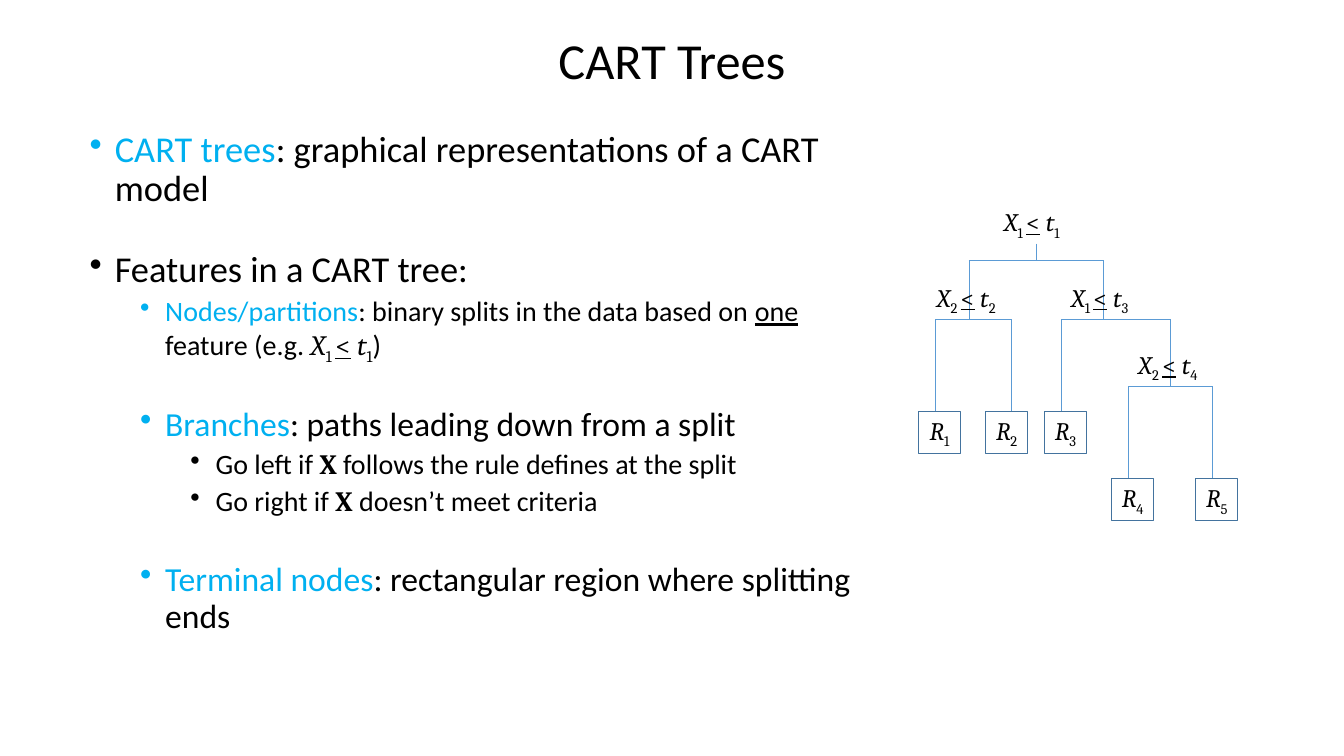
import pptx
import pptx.util
import pptx.dml.color
import pptx.enum.shapes
import pptx.enum.text
import pptx.oxml.ns
from dataclasses import dataclass
from lxml import etree


@dataclass(frozen=True)
class Theme:
    font: str = "Calibri"
    math: str = "Cambria"
    ink: str = "000000"
    accent: str = "00B0F0"
    branch: str = "5B9BD5"
    leaf: str = "43739E"
    title: int = 36
    feature: int = 26
    term: int = 24
    detail: int = 20
    node: int = 18


T = Theme()
W, H = 13.33, 7.5


def rule(feature, threshold):
    """Runs for the split rule X_feature <= t_threshold."""
    return [("X", "mi"), (f"{feature} ", "ms"), ("<", "mu"), (" ", "m"),
            ("t", "mi"), (str(threshold), "ms")]


# Run styles: a accent, b bold, i italic, m math font, s subscript, u underline
TITLE = [("CART Trees", "")]
# level, size, space before, runs
BODY = [
    (0, T.feature, 10, [("CART trees", "a"),
                        (": graphical representations of a CART model", "")]),
    (0, T.feature, 30, [("Features in a CART tree:", "")]),
    (1, T.detail, 5, [("Nodes/partitions", "a"),
                      (": binary splits in the data based on ", ""),
                      ("one", "u"), (" feature (e.g. ", ""),
                      *rule(1, 1), (")", "")]),
    (1, T.term, 32, [("Branches", "a"),
                     (": paths leading down from a split", "")]),
    (2, T.detail, 5, [("Go left if ", ""), ("X ", "mb"),
                      ("follows the rule defines at the split", "")]),
    (2, T.detail, 5, [("Go right if ", ""), ("X", "mb"),
                      (" doesn’t meet criteria", "")]),
    (1, T.term, 32, [("Terminal nodes", "a"),
                     (": rectangular region where splitting ends", "")]),
]

# The tree sits on a grid of twelfths of an inch.
TREE_X, TREE_Y, CELL = 9.11, 2.0, 1 / 12
LEAF_CELLS = 5
LABEL_W, LABEL_H = 0.86, 0.4
# feature, threshold, label (col, row), stem col, stem top, bar row, bar left, bar right
SPLITS = [
    (1, 1, (9, 0), 14, 5, 7, 6, 22),
    (2, 2, (1, 9), 6, 7, 14, 2, 11),
    (1, 3, (17, 9), 22, 7, 14, 17, 30),
    (2, 4, (25, 17), 30, 14, 22, 25, 35),
]
# box col, box row, stem col, stem top
LEAVES = [(0, 25, 2, 14), (8, 25, 11, 14), (15, 25, 17, 14),
          (23, 33, 25, 22), (33, 33, 35, 22)]


def rgb(color):
    return pptx.dml.color.RGBColor.from_string(color)


def inches(*lengths):
    return [pptx.util.Inches(length) for length in lengths]


def grid(col, row):
    return TREE_X + col * CELL, TREE_Y + row * CELL


def add_runs(p, runs, size):
    for text, style in runs:
        r = p.add_run()
        r.text = text
        f = r.font
        f.size = pptx.util.Pt(size)
        f.name = T.math if "m" in style else T.font
        f.color.rgb = rgb(T.accent if "a" in style else T.ink)
        f.bold, f.italic, f.underline = ("b" in style, "i" in style, "u" in style)
        if "s" in style:
            r.font._element.set("baseline", "-25000")


def add_bullet(p, level, color):
    pPr = p._p.get_or_add_pPr()
    pPr.set("marL", str(pptx.util.Inches(0.25 + 0.5 * level)))
    pPr.set("indent", str(pptx.util.Inches(-0.25)))
    qn = pptx.oxml.ns.qn
    bu_color = etree.SubElement(pPr, qn("a:buClr"))
    etree.SubElement(bu_color, qn("a:srgbClr"), val=color)
    etree.SubElement(pPr, qn("a:buChar"), char="•")


def add_text(s, x, y, w, h, wrap=True):
    tf = s.shapes.add_textbox(*inches(x, y, w, h)).text_frame
    tf.word_wrap = wrap
    return tf


def add_branch(s, start, end):
    line = s.shapes.add_connector(pptx.enum.shapes.MSO_CONNECTOR.STRAIGHT,
                                  *inches(*grid(*start), *grid(*end)))
    line.line.color.rgb = rgb(T.branch)
    line.line.width = pptx.util.Pt(0.5)
    etree.SubElement(line._element.spPr, pptx.oxml.ns.qn("a:effectLst"))


def add_title(s):
    tf = add_text(s, (W - 9) / 2, 0, 9, H / 6)
    tf.vertical_anchor = pptx.enum.text.MSO_ANCHOR.MIDDLE
    p = tf.paragraphs[0]
    p.alignment = pptx.enum.text.PP_ALIGN.CENTER
    p.line_spacing = 0.9
    add_runs(p, TITLE, T.title)


def add_body(s):
    tf = add_text(s, 0.79, H / 6, 7.85, H * 0.75)
    for i, (level, size, before, runs) in enumerate(BODY):
        p = tf.add_paragraph() if i else tf.paragraphs[0]
        p.level = level
        p.line_spacing = 0.9
        p.space_before = pptx.util.Pt(before)
        add_bullet(p, level, T.accent if "a" in runs[0][1] else T.ink)
        add_runs(p, runs, size)


def add_split(s, feature, threshold, label, stem, top, bar, left, right):
    add_branch(s, (stem, top), (stem, bar))
    add_branch(s, (left, bar), (right, bar))
    tf = add_text(s, *grid(*label), LABEL_W, LABEL_H, wrap=False)
    tf.auto_size = pptx.enum.text.MSO_AUTO_SIZE.SHAPE_TO_FIT_TEXT
    add_runs(tf.paragraphs[0], rule(feature, threshold), T.node)


def add_leaf(s, number, col, row, stem, top):
    add_branch(s, (stem, top), (stem, row))
    side = LEAF_CELLS * CELL
    sp = s.shapes.add_shape(pptx.enum.shapes.MSO_SHAPE.RECTANGLE,
                            *inches(*grid(col, row), side, side))
    sp.shadow.inherit = False
    sp.fill.background()
    sp.line.color.rgb = rgb(T.leaf)
    sp.line.width = pptx.util.Pt(1)
    tf = sp.text_frame
    tf.word_wrap = False
    tf.vertical_anchor = pptx.enum.text.MSO_ANCHOR.MIDDLE
    p = tf.paragraphs[0]
    p.alignment = pptx.enum.text.PP_ALIGN.CENTER
    add_runs(p, [("R", "mi"), (str(number), "ms")], T.node)


def main():
    prs = pptx.Presentation()
    prs.slide_width, prs.slide_height = inches(W, H)
    s = prs.slides.add_slide(prs.slide_layouts[6])
    add_title(s)
    add_body(s)
    for split in SPLITS:
        add_split(s, *split)
    for number, leaf in enumerate(LEAVES, 1):
        add_leaf(s, number, *leaf)
    prs.save("out.pptx")


if __name__ == "__main__":
    main()
